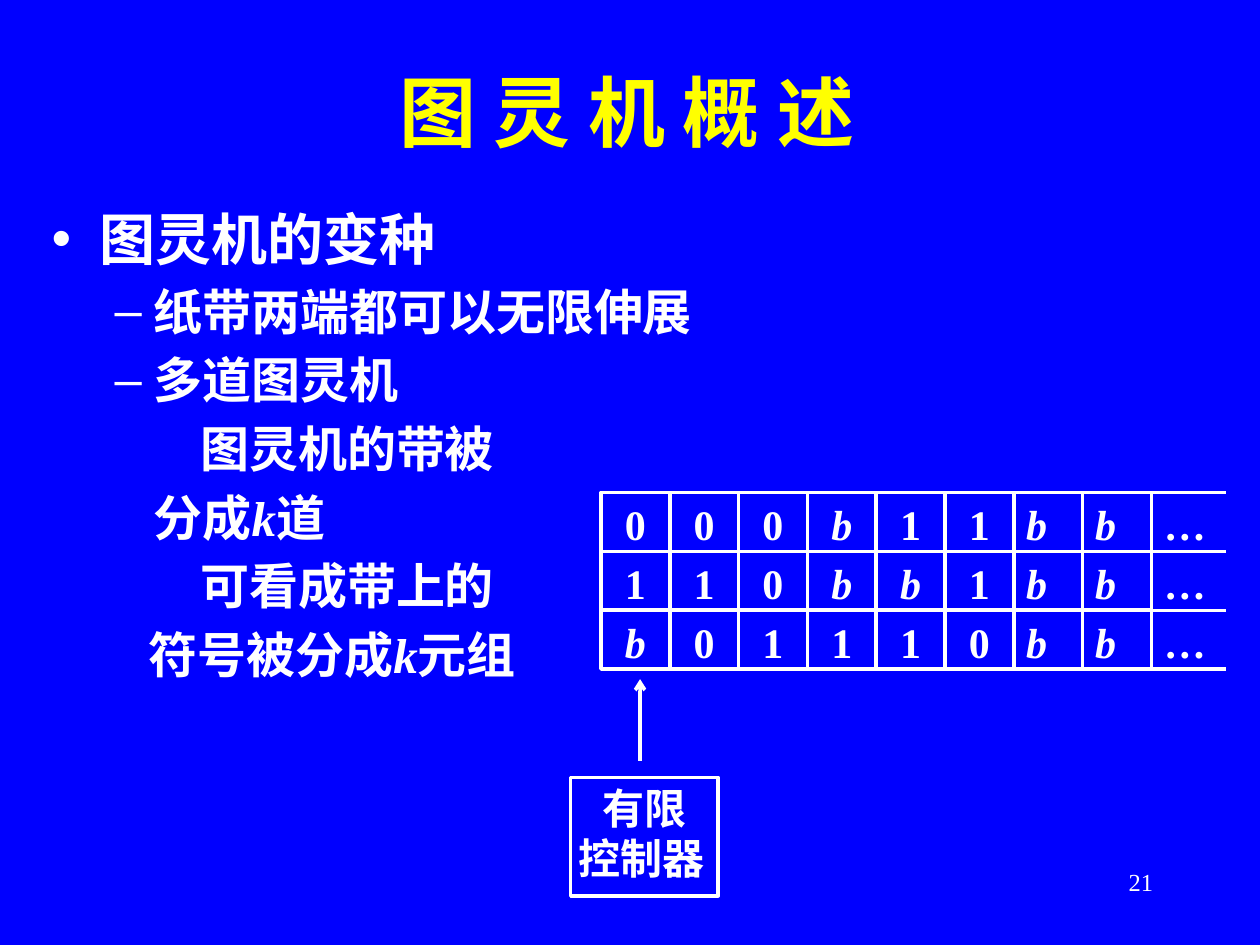
from lxml.etree import SubElement
from pptx import Presentation
from pptx.dml.color import RGBColor
from pptx.enum.shapes import MSO_CONNECTOR, MSO_SHAPE
from pptx.enum.text import MSO_ANCHOR, MSO_AUTO_SIZE, PP_ALIGN
from pptx.oxml.ns import qn
from pptx.util import Inches, Pt

BLUE = RGBColor(0x00, 0x00, 0xFF)
YELLOW = RGBColor(0xFF, 0xFF, 0x00)
WHITE = RGBColor(0xFF, 0xFF, 0xFF)
SERIF, SANS = "Times New Roman", "Noto Sans CJK SC"

TITLE = "图 灵 机 概 述"
OUTLINE = [
    (0, "•", 0.38, -0.38, ["图灵机的变种"]),
    (1, "–", 0.81, -0.31, ["纸带两端都可以无限伸展"]),
    (1, "–", 0.81, -0.31, ["多道图灵机"]),
    (1, None, 1.18, 0, ["图灵机的带被"]),
    (1, None, 0.81, 0, ["分成", "k", "道"]),
    (1, None, 1.18, 0, ["可看成带上的"]),
    (1, None, 0.77, 0, ["符号被分成", "k", "元组"]),
]
LEVEL_SIZES = [32, 28]
TRACKS = ["000b11bb…", "110bb1bb…", "b01110bb…"]
CENTRED_COLUMNS = 6
CONTROLLER = [("有限", PP_ALIGN.CENTER), ("控制器", PP_ALIGN.LEFT)]
PAGE = "21"

TAPE_LEFT, TAPE_TOP, TAPE_END = 4.77, 3.91, 9.73
CELL_W, CELL_H = 0.546, 0.467


def style(paragraph, size, colour=WHITE, face=SERIF, bold=True):
    font = paragraph.font
    font.size, font.name, font.bold = Pt(size), face, bold
    font.color.rgb = colour


def place(part, *box):
    part.left, part.top, part.width, part.height = map(Inches, box)


def add_box(shapes, *box):
    rect = shapes.add_shape(MSO_SHAPE.RECTANGLE, *map(Inches, box))
    rect.shadow.inherit = False
    rect.fill.background()
    rect.line.color.rgb = WHITE
    rect.line.width = Pt(2)
    rect.text_frame.vertical_anchor = MSO_ANCHOR.TOP
    return rect


def add_line(shapes, *ends):
    line = shapes.add_connector(MSO_CONNECTOR.STRAIGHT, *map(Inches, ends))
    line.line.color.rgb = WHITE
    line.line.width = Pt(2)
    SubElement(line._element.spPr, qn("a:effectLst"))
    return line


def add_outline(body):
    frame = body.text_frame
    frame.auto_size = MSO_AUTO_SIZE.NONE
    for i, (level, bullet, margin, indent, parts) in enumerate(OUTLINE):
        paragraph = frame.add_paragraph() if i else frame.paragraphs[0]
        paragraph.level = level
        properties = paragraph._p.get_or_add_pPr()
        properties.set("marL", str(Inches(margin)))
        properties.set("indent", str(Inches(indent)))
        if bullet:
            SubElement(properties, qn("a:buChar")).set("char", bullet)
        else:
            SubElement(properties, qn("a:buNone"))
        style(paragraph, LEVEL_SIZES[level])
        for part in parts:
            run = paragraph.add_run()
            run.text = part
            if part == "k":
                run.font.italic = True


def add_tape(shapes):
    for row, track in enumerate(TRACKS):
        for column, symbol in enumerate(track):
            box = (TAPE_LEFT + column * CELL_W, TAPE_TOP + row * CELL_H, CELL_W, CELL_H)
            if symbol == "…":
                cell = shapes.add_textbox(*map(Inches, box))
                cell.text_frame.word_wrap = True
            else:
                cell = add_box(shapes, *box)
            paragraph = cell.text_frame.paragraphs[0]
            paragraph.text = symbol
            centred = column < CENTRED_COLUMNS
            paragraph.alignment = PP_ALIGN.CENTER if centred else PP_ALIGN.LEFT
            style(paragraph, 24)
            paragraph.font.italic = symbol == "b"
    open_edge = TAPE_LEFT + (len(TRACKS[0]) - 1) * CELL_W
    for row in range(len(TRACKS) + 1):
        y = TAPE_TOP + row * CELL_H
        add_line(shapes, open_edge, y, TAPE_END, y)


def add_controller(shapes):
    head = add_line(shapes, 5.08, 5.39, 5.08, 6.04)
    SubElement(head.line._get_or_add_ln(), qn("a:headEnd")).set("type", "arrow")
    frame = add_box(shapes, 4.53, 6.17, 1.17, 0.94).text_frame
    frame.margin_left = frame.margin_right = Inches(0.06)
    frame.margin_top = frame.margin_bottom = Inches(0.04)
    for i, (text, alignment) in enumerate(CONTROLLER):
        paragraph = frame.add_paragraph() if i else frame.paragraphs[0]
        paragraph.text = text
        paragraph.alignment = alignment
        style(paragraph, 24, face=SANS)


def main():
    deck = Presentation()
    deck.slide_width, deck.slide_height = Inches(10), Inches(7.5)
    slide = deck.slides.add_slide(deck.slide_layouts[1])
    slide.background.fill.solid()
    slide.background.fill.fore_color.rgb = BLUE
    title, body = slide.placeholders

    place(title, 0.25, 0.25, 9.45, 1.26)
    title.text_frame.text = TITLE
    title.text_frame.vertical_anchor = MSO_ANCHOR.MIDDLE
    heading = title.text_frame.paragraphs[0]
    heading.alignment = PP_ALIGN.CENTER
    style(heading, 44, YELLOW)

    place(body, 0.31, 1.57, 9.45, 5.51)
    add_outline(body)
    add_controller(slide.shapes)
    add_tape(slide.shapes)

    page = slide.shapes.add_textbox(*map(Inches, (7.17, 6.83, 2.08, 0.5)))
    page.text_frame.word_wrap = True
    number = page.text_frame.paragraphs[0]
    number.text = PAGE
    number.alignment = PP_ALIGN.RIGHT
    style(number, 14, bold=False)
    deck.save("out.pptx")


if __name__ == "__main__":
    main()
